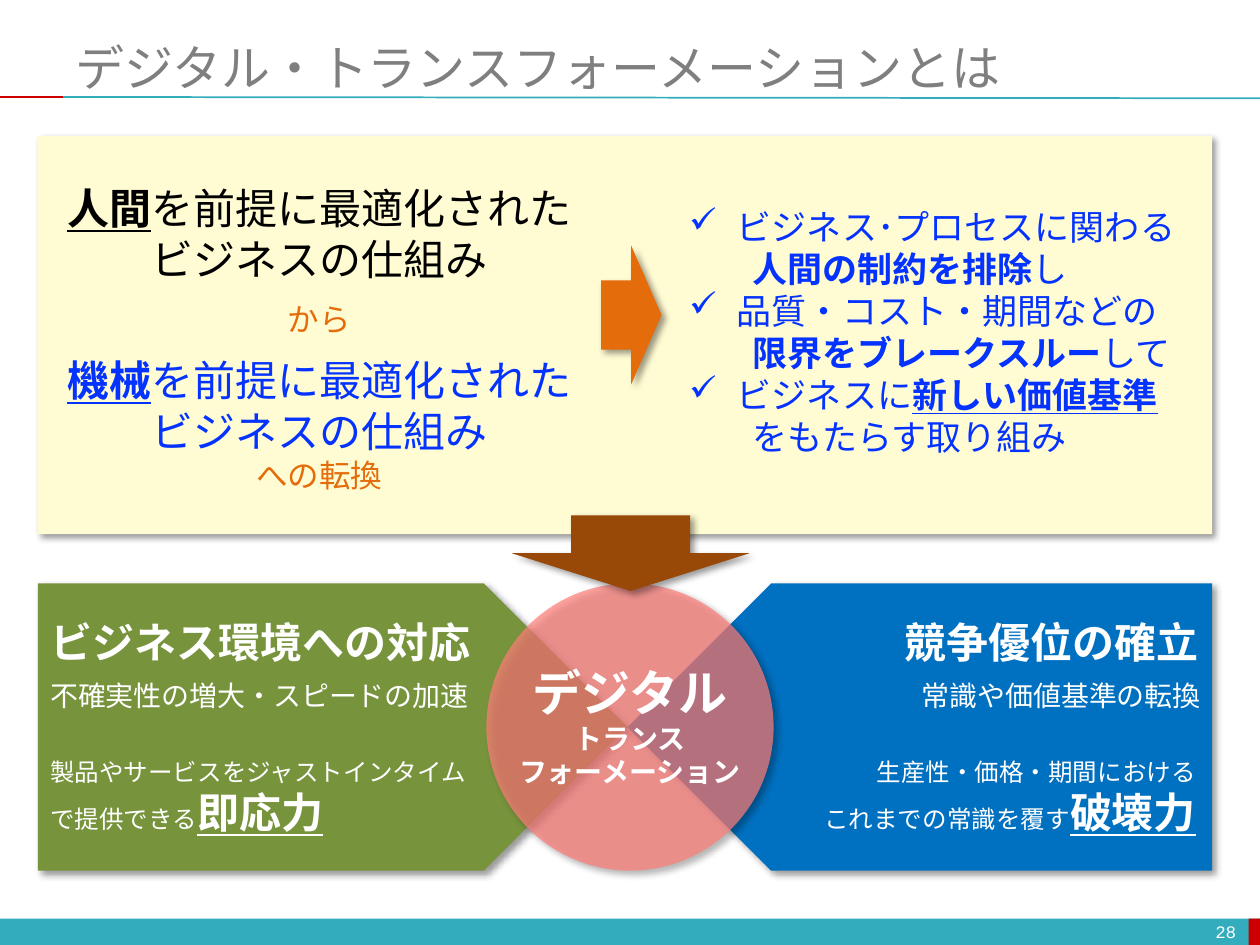
from pptx import Presentation
from pptx.dml.color import RGBColor
from pptx.enum.shapes import MSO_CONNECTOR, MSO_SHAPE
from pptx.enum.text import MSO_ANCHOR, PP_ALIGN
from pptx.oxml.ns import qn
from pptx.util import Inches, Pt
from lxml import etree

LEFT, CENTER, RIGHT = PP_ALIGN.LEFT, PP_ALIGN.CENTER, PP_ALIGN.RIGHT
RECT, OVAL = MSO_SHAPE.RECTANGLE, MSO_SHAPE.OVAL
PENTAGON = MSO_SHAPE.PENTAGON
RIGHT_ARROW, UP_ARROW = MSO_SHAPE.RIGHT_ARROW, MSO_SHAPE.UP_ARROW
MIDDLE, TOP = MSO_ANCHOR.MIDDLE, MSO_ANCHOR.TOP

COLORS = {
    "teal": "33ACBD", "red": "CC0000", "cream": "FFFBD2", "gray": "7F7F7F",
    "white": "FFFFFF", "black": "000000", "blue": "0432FF",
    "orange": "E46C0A", "green": "77933C", "navy": "0070C0",
    "pink": "FF7E79", "brown": "984807",
}
BODY_FONT = "Noto Sans CJK JP"
LINE_HEIGHT = 1.2

# Page grid, in inches
WIDTH, HEIGHT = 10, 7.5
MID = WIDTH / 2
EDGE_L, EDGE_R = 0.3, 9.62
FOOT_Y, FOOT_H = 7.29, 0.22
RULE_Y, RULE_SPLIT = 0.77, 0.5
BAND_Y, BAND_H = 4.63, 2.28      # lower row; also the circle's diameter
BAND_MEET = 4.98
HEAD_Y, SUB_Y, POWER_Y = 4.84, 5.34, 5.96


def rgb(name):
    return RGBColor.from_string(COLORS[name])


def add_child(parent, tag, **attributes):
    child = etree.SubElement(parent, qn(tag))
    for key, value in attributes.items():
        child.set(key, str(value))
    return child


def add_block(slide, kind, box, color, rotation=0, opacity=None, shadow=True):
    """Filled shape without outline, optionally with a soft shadow."""
    block = slide.shapes.add_shape(kind, *map(Inches, box))
    block.rotation = rotation
    block.fill.solid()
    block.fill.fore_color.rgb = rgb(color)
    block.line.fill.background()
    block.shadow.inherit = False
    properties = block._element.spPr
    if opacity:
        fill_color = properties.find(qn("a:solidFill"))[0]
        add_child(fill_color, "a:alpha", val=opacity * 1000)
    if shadow:
        effects = properties.find(qn("a:effectLst"))
        outer = add_child(effects, "a:outerShdw", blurRad=Pt(4), dist=Pt(3),
                          dir=45 * 60000, algn="tl", rotWithShape=0)
        shade = add_child(outer, "a:srgbClr", val=COLORS["black"])
        add_child(shade, "a:alpha", val=40000)


def add_rule(slide, start, end, color):
    rule = slide.shapes.add_connector(
        MSO_CONNECTOR.STRAIGHT, *map(Inches, (*start, *end)))
    rule.line.color.rgb = rgb(color)
    rule.line.width = Pt(1)
    add_child(rule._element.spPr, "a:effectLst")


def run(text, size, color="white", bold=False, underline=False):
    return text, size, color, bold, underline


def line(*runs, before=0, indent=0, check=False):
    return runs, before, indent, check


def add_text(slide, box, lines, align=LEFT, anchor=TOP, wrap=True,
             font=BODY_FONT):
    frame = slide.shapes.add_textbox(*map(Inches, box)).text_frame
    frame.word_wrap = wrap
    frame.vertical_anchor = anchor
    for i, (runs, before, indent, check) in enumerate(lines):
        paragraph = frame.add_paragraph() if i else frame.paragraphs[0]
        paragraph.alignment = align
        paragraph.space_before = Pt(before)
        largest = max(size for _, size, *_ in runs)
        paragraph.line_spacing = Pt(largest * LINE_HEIGHT)
        settings = paragraph._p.get_or_add_pPr()
        if indent:
            settings.set("marL", str(Inches(indent)))
        if check:
            settings.set("indent", str(-Inches(indent)))
            add_child(settings, "a:buChar", char="✓")
        for text, size, color, bold, underline in runs:
            piece = paragraph.add_run()
            piece.text = text
            style = piece.font
            style.name, style.size = font, Pt(size)
            style.bold, style.underline = bold, underline
            style.color.rgb = rgb(color)
            if font == BODY_FONT:
                add_child(piece._r.get_or_add_rPr(), "a:ea", typeface=font)


def add_page_frame(slide):
    add_block(slide, RECT, (0, FOOT_Y, WIDTH, FOOT_H), "teal", shadow=False)
    add_block(slide, RECT, (9.91, FOOT_Y, 0.1, FOOT_H), "red", shadow=False)
    add_rule(slide, (RULE_SPLIT, RULE_Y), (WIDTH, RULE_Y + 0.01), "teal")
    add_rule(slide, (0, RULE_Y), (RULE_SPLIT, RULE_Y), "red")
    add_text(slide, (0.5, 0.3, 9.5, 0.46),
             [line(run("デジタル・トランスフォーメーションとは", 28, "gray"))],
             anchor=MIDDLE, font="Calibri")
    add_text(slide, (7.58, 7.27, 2.33, 0.24), [line(run("28", 10))],
             align=RIGHT, anchor=MIDDLE, font="Courier New")


def add_definition(slide):
    add_block(slide, RECT, (EDGE_L, 1.08, EDGE_R - EDGE_L, 3.16), "cream")

    # What is achieved
    def goal(*runs, check=True):
        return line(*(run(text, 20, "blue", *style) for text, *style in runs),
                    indent=0.38 if check else 0.5, check=check)

    add_text(slide, (5.37, 1.58, 4.25, 2.12), [
        goal(("ビジネス･プロセスに関わる",)),
        goal(("人間の制約を排除", True), ("し",), check=False),
        goal(("品質・コスト・期間などの",)),
        goal(("限界をブレークスルー", True), ("して",), check=False),
        goal(("ビジネスに",), ("新しい価値基準", True, True)),
        goal(("をもたらす取り組み",), check=False),
    ])

    # From people to machines
    def premise(subject, color, before=0):
        return [line(run(subject, 24, color, True, True),
                     run("を前提に最適化された", 24, color), before=before),
                line(run("ビジネスの仕組み", 24, color))]

    gap = 8 * LINE_HEIGHT
    add_text(slide, (0.39, 1.4, 4.29, 2.59), [
        *premise("人間", "black"),
        line(run("から", 18, "orange"), before=gap),
        *premise("機械", "blue", before=gap),
        line(run("への転換", 18, "orange")),
    ], align=CENTER)


def add_benefit(slide, align, columns, heading, summary, detail, lead, power):
    """White texts of one pentagon; columns holds (left, width) per text."""
    rows = [
        (HEAD_Y, 0.5, False, [line(run(heading, 24, bold=True))]),
        (SUB_Y, 0.37, False, [line(run(summary, 16))]),
        (POWER_Y, 0.74, True, [
            line(run(detail, 14)),
            line(run(lead, 14), run(power, 24, bold=True, underline=True))]),
    ]
    for (left, width), (top, height, wrap, lines) in zip(columns, rows):
        add_text(slide, (left, top, width, height), lines, align, wrap=wrap)


def main():
    deck = Presentation()
    deck.slide_width, deck.slide_height = Inches(WIDTH), Inches(HEIGHT)
    slide = deck.slides.add_slide(deck.slide_layouts[6])
    add_page_frame(slide)
    add_definition(slide)

    # Two pentagons pointing at the centre
    add_block(slide, PENTAGON,
              (EDGE_L, BAND_Y, BAND_MEET - EDGE_L, BAND_H), "green")
    add_block(slide, PENTAGON,
              (BAND_MEET, BAND_Y, EDGE_R - BAND_MEET, BAND_H), "navy", 180)
    add_benefit(slide, LEFT, [(EDGE_L, 3.57), (EDGE_L, 3.57), (EDGE_L, 3.58)],
                "ビジネス環境への対応", "不確実性の増大・スピードの加速",
                "製品やサービスをジャストインタイム", "で提供できる", "即応力")
    add_benefit(slide, RIGHT, [(7.05, 2.56), (7.18, 2.45), (6.14, 3.45)],
                "競争優位の確立", "常識や価値基準の転換",
                "生産性・価格・期間における", "これまでの常識を覆す", "破壊力")

    # Central circle
    add_block(slide, OVAL, (MID - BAND_H / 2, BAND_Y, BAND_H, BAND_H),
              "pink", opacity=71)
    add_text(slide, (MID - 1, 5.21, 2, 1.11), [
        line(run("デジタル", 28, bold=True)),
        line(run("トランス", 16, bold=True)),
        line(run("フォーメーション", 16, bold=True)),
    ], align=CENTER, wrap=False)

    # Arrows
    add_block(slide, RIGHT_ARROW, (4.77, 1.95, 0.48, 1.1), "orange")
    add_block(slide, UP_ARROW, (4.06, 4.09, 1.89, 0.6), "brown", 180)
    deck.save("out.pptx")


if __name__ == "__main__":
    main()
